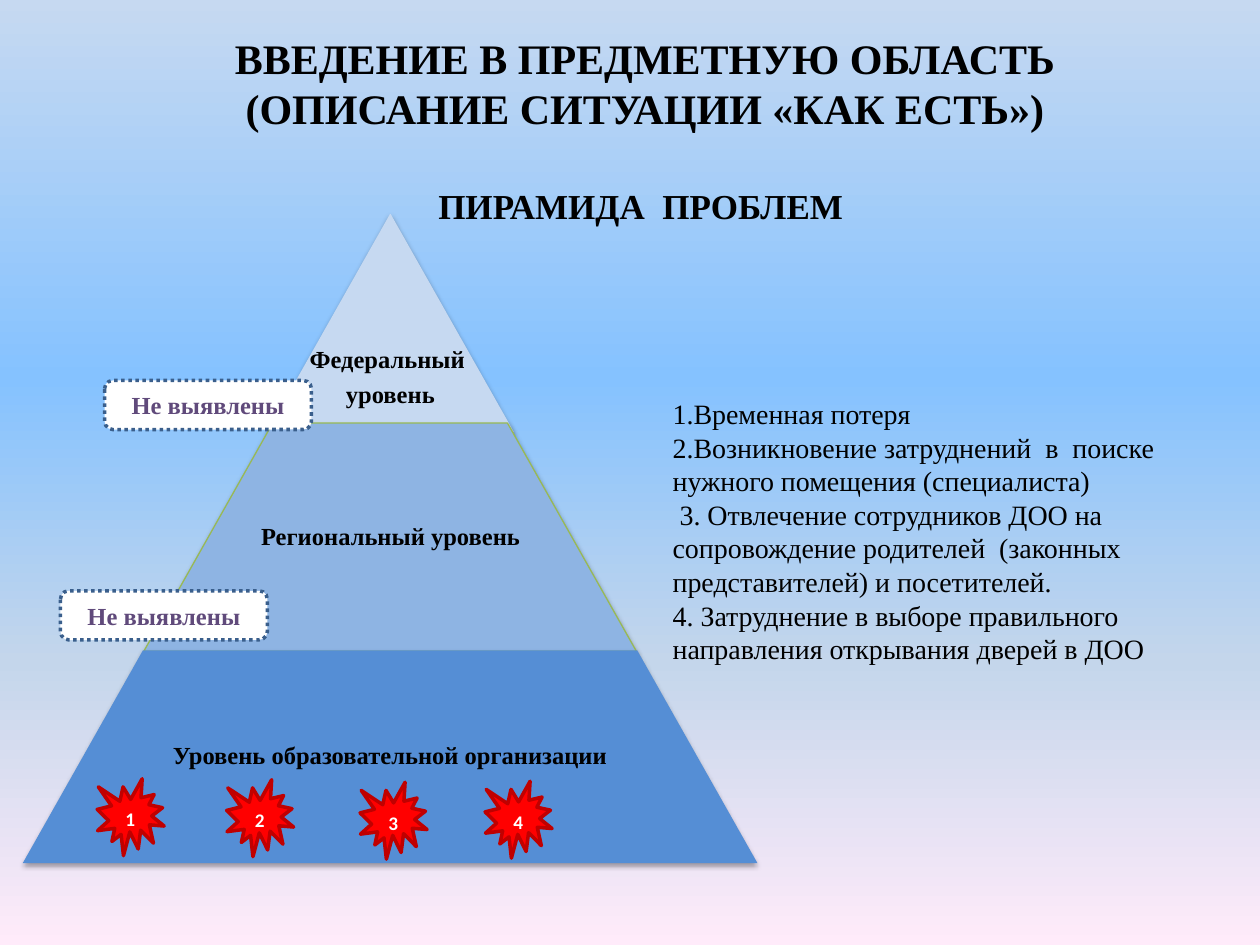
from lxml import etree
from pptx import Presentation
from pptx.dml.color import RGBColor
from pptx.enum.dml import MSO_LINE
from pptx.enum.shapes import MSO_SHAPE as Shape
from pptx.enum.text import MSO_ANCHOR as Anchor, PP_ALIGN as Align
from pptx.oxml.ns import qn
from pptx.util import Cm, Pt

BLACK = RGBColor(0x00, 0x00, 0x00)
WHITE = RGBColor(0xFF, 0xFF, 0xFF)
PALE_BLUE = RGBColor(0xC6, 0xD9, 0xF1)
SKY_BLUE = RGBColor(0x85, 0xC2, 0xFF)
MIST_BLUE = RGBColor(0xC4, 0xD6, 0xEB)
PINK = RGBColor(0xFF, 0xEB, 0xFA)
MID_BLUE = RGBColor(0x8E, 0xB4, 0xE3)
DEEP_BLUE = RGBColor(0x55, 0x8E, 0xD5)
OLIVE = RGBColor(0x98, 0xB9, 0x55)
NAVY = RGBColor(0x3A, 0x5F, 0x8C)
PURPLE = RGBColor(0x60, 0x4A, 0x7B)
RED = RGBColor(0xFF, 0x00, 0x00)
DARK_RED = RGBColor(0xC0, 0x00, 0x00)

SERIF = "Times New Roman"
BACKGROUND = [(0, PALE_BLUE), (40, SKY_BLUE), (70, MIST_BLUE), (100, PINK)]
LEVELS = [
    ((5.38, 4.32, 4.98, 4.39), PALE_BLUE, None,
     (5.38, 6.86, 4.98, 1.52), ["Федеральный ", "уровень"]),
    ((2.9, 8.53, 9.93, 4.6), MID_BLUE, OLIVE,
     (4.65, 8.53, 6.45, 4.6), ["Региональный уровень"]),
    ((0.46, 13.11, 14.81, 4.29), DEEP_BLUE, None,
     (3.05, 13.11, 9.63, 4.29), ["Уровень образовательной организации"]),
]
PROBLEMS = [
    "1.Временная потеря",
    "2.Возникновение затруднений  в  поиске нужного помещения (специалиста)",
    " 3. Отвлечение сотрудников ДОО на сопровождение родителей  "
    "(законных представителей) и посетителей.",
    "4. Затруднение в выборе правильного направления открывания дверей в ДОО",
]
TAGS = [(2.11, 7.67), (1.22, 11.91)]
SEALS = [(1.96, 15.7), (4.57, 15.72), (7.26, 15.77), (9.78, 15.75)]


def set_background(slide):
    fill = slide.background.fill
    fill.gradient()
    fill.gradient_angle = 270
    stops = slide.element.find(".//" + qn("a:gsLst"))
    for stop in list(stops):
        stops.remove(stop)
    for percent, color in BACKGROUND:
        stop = etree.SubElement(stops, qn("a:gs"), pos=str(percent * 1000))
        etree.SubElement(stop, qn("a:srgbClr"), val=str(color))


def write(tf, lines, size, color=BLACK, bold=False, align=Align.CENTER,
          anchor=Anchor.MIDDLE, font=SERIF):
    tf.vertical_anchor = anchor
    for i, line in enumerate(lines):
        p = tf.add_paragraph() if i else tf.paragraphs[0]
        p.text = line
        p.alignment = align
        p.font.name = font
        p.font.size = Pt(size)
        p.font.bold = bold
        p.font.color.rgb = color
    return tf


def add_text(slide, box, lines, size, **style):
    tf = slide.shapes.add_textbox(*map(Cm, box)).text_frame
    tf.word_wrap = True
    return write(tf, lines, size, **style)


def add_figure(slide, kind, box, fill, line=None, width=2):
    sp = slide.shapes.add_shape(kind, *map(Cm, box))
    sp.shadow.inherit = False
    sp.fill.solid()
    sp.fill.fore_color.rgb = fill
    if line is None:
        sp.line.fill.background()
    else:
        sp.line.color.rgb = line
        sp.line.width = Pt(width)
    return sp


def add_shadow(sp):
    effects = sp.element.spPr.find(qn("a:effectLst"))
    shadow = etree.SubElement(
        effects, qn("a:outerShdw"), blurRad=str(Pt(3.1)), dist=str(Pt(1.8)),
        dir="5400000", rotWithShape="0")
    color = etree.SubElement(shadow, qn("a:srgbClr"), val=str(BLACK))
    etree.SubElement(color, qn("a:alpha"), val="35000")


def add_level(slide, box, fill, line, text_box, lines):
    sp = add_figure(slide, Shape.TRAPEZOID, box, fill, line, 0.75)
    sp.adjustments[0] = 0.565
    add_shadow(sp)
    tf = add_text(slide, text_box, lines, 14, bold=True)
    tf.margin_left = tf.margin_right = Cm(0.05)
    tf.margin_top = tf.margin_bottom = Cm(0.05)
    for i, p in enumerate(tf.paragraphs):
        p.line_spacing = 0.9
        if i:
            p.space_before = Pt(5)


def add_tag(slide, left, top):
    sp = add_figure(slide, Shape.ROUNDED_RECTANGLE, (left, top, 4.17, 0.99),
                    WHITE, NAVY)
    sp.line.dash_style = MSO_LINE.ROUND_DOT
    write(sp.text_frame, ["Не выявлены"], 14, color=PURPLE, bold=True)


def add_seal(slide, left, top, number):
    sp = add_figure(slide, Shape.EXPLOSION1, (left, top, 1.35, 1.55),
                    RED, DARK_RED)
    write(sp.text_frame, [str(number)], 11, color=WHITE, bold=True,
          anchor=Anchor.TOP, font="Calibri")


def main():
    prs = Presentation()
    prs.slide_width, prs.slide_height = Cm(25.4), Cm(19.05)
    slide = prs.slides.add_slide(prs.slide_layouts[6])
    set_background(slide)

    title = add_text(
        slide, (2.49, 0.53, 21.03, 3.9),
        ["ВВЕДЕНИЕ В ПРЕДМЕТНУЮ ОБЛАСТЬ", "(ОПИСАНИЕ СИТУАЦИИ «КАК ЕСТЬ»)",
         "ПИРАМИДА  ПРОБЛЕМ "],
        24, bold=True, anchor=Anchor.TOP)
    subtitle = title.paragraphs[-1]
    subtitle.font.size = Pt(20)
    subtitle.space_before = Pt(29)

    for level in LEVELS:
        add_level(slide, *level)
    for left, top in TAGS:
        add_tag(slide, left, top)
    add_text(slide, (13.31, 7.87, 11.81, 5.74), PROBLEMS, 16,
             align=Align.LEFT, anchor=Anchor.TOP)
    for number, (left, top) in enumerate(SEALS, 1):
        add_seal(slide, left, top, number)

    prs.save("out.pptx")


if __name__ == "__main__":
    main()
